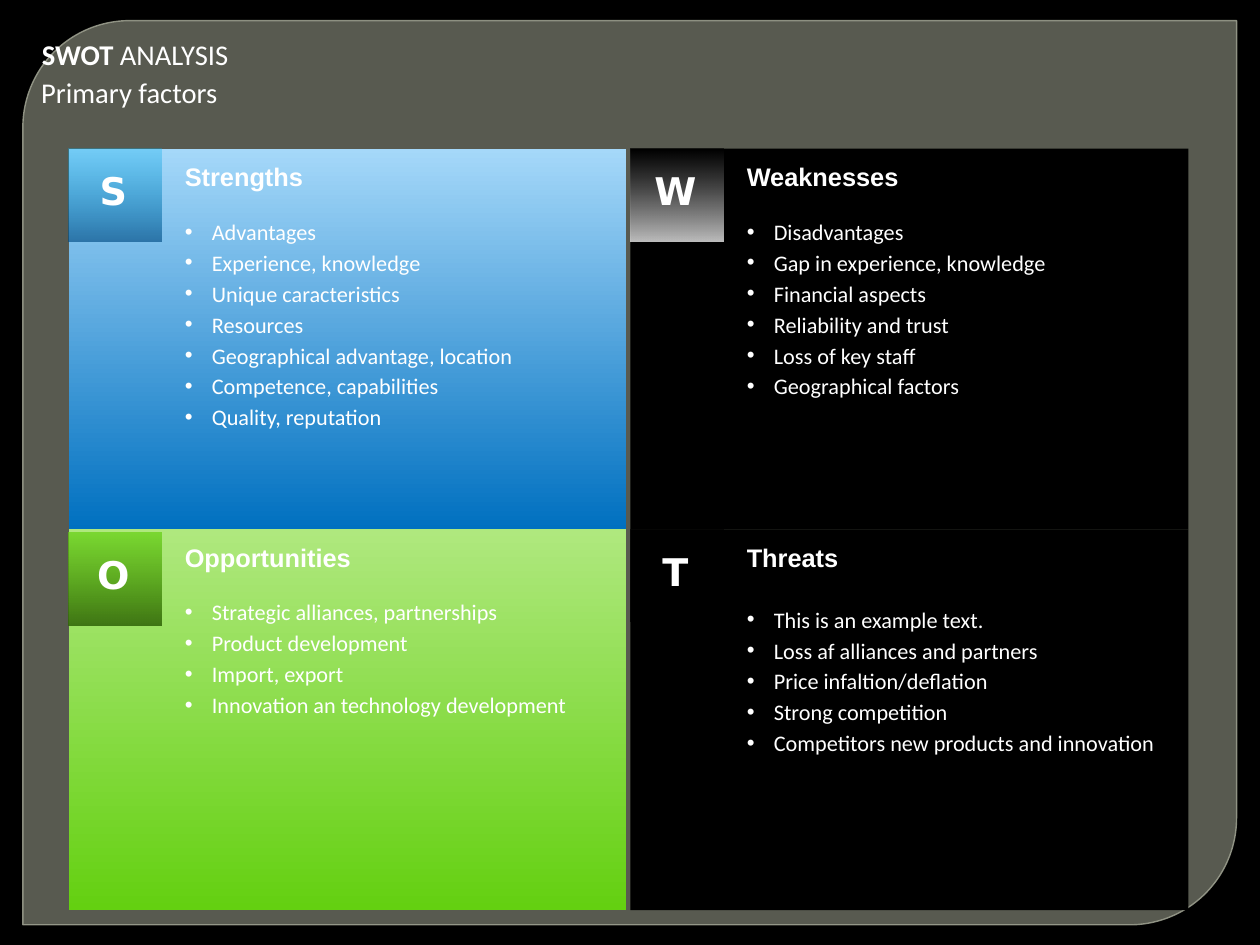
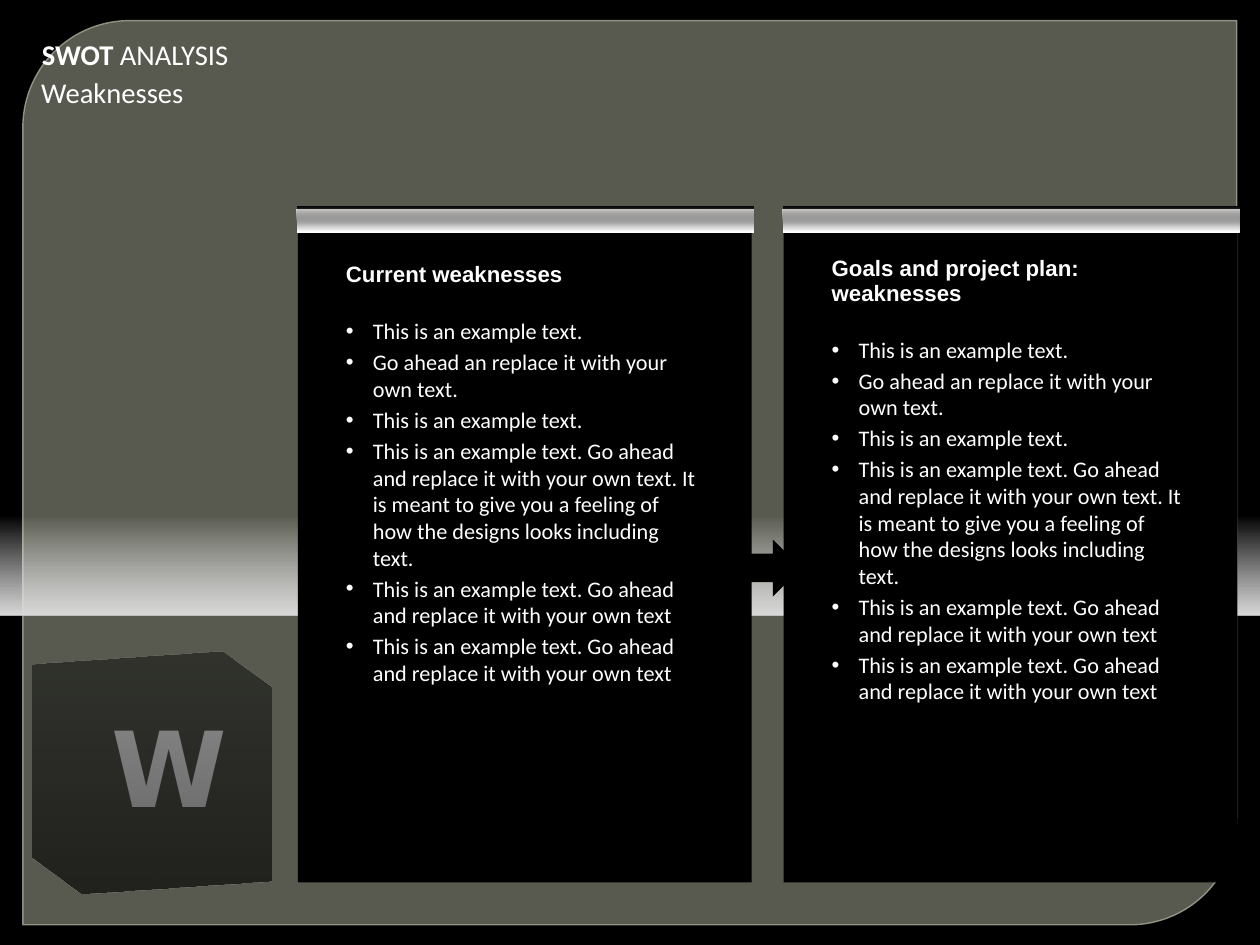
import pptx
import pptx.dml.color
import pptx.enum.shapes
import pptx.enum.text
import pptx.oxml
import pptx.oxml.ns
import pptx.util
from lxml import etree

Pt = pptx.util.Pt
SHAPES = pptx.enum.shapes.MSO_SHAPE
ALIGN = pptx.enum.text.PP_ALIGN
ANCHOR = pptx.enum.text.MSO_ANCHOR
qn = pptx.oxml.ns.qn

SLIDE_SIZE = (793.75, 595.25)
WHITE, BLACK = "FFFFFF", "000000"
FRAME, FRAME_EDGE = "888B7B", "9DA090"
BODY, HEADING, LETTER = "Calibri", "Arial", "DejaVu Sans"
TIGHT = 0.93
PANEL_SIZE = (351.4, 239.8)
PANEL_STEP = (354, 239.8)
GRID_ORIGIN = (43.2, 93.7)
TILE = 58.3

QUADRANTS = [
    ("S", "Strengths", 13.5, 0,
     [("A5D8F9", 100), ("0070C0", 100)], [("00B0F0", 30), ("004C84", 65)],
     ["Advantages", "Experience, knowledge", "Unique caracteristics", "Resources",
      "Geographical advantage, location", "Competence, capabilities",
      "Quality, reputation"]),
    ("W", "Weaknesses", 13.5, 0,
     [(BLACK, 100)], [(BLACK, 58), (WHITE, 74)],
     ["Disadvantages", "Gap in experience, knowledge", "Financial aspects",
      "Reliability and trust", "Loss of key staff", "Geographical factors"]),
    ("O", "Opportunities", 13.5, 2,
     [("AFE87E", 100), ("64D011", 100)], [("64D011", 70), ("326609", 88)],
     ["Strategic alliances, partnerships", "Product development", "Import, export",
      "Innovation an technology development"]),
    ("T", "Threats", 18, 0,
     [(BLACK, 100)], [(BLACK, 66), (BLACK, 75)],
     ["This is an example text.", "Loss af alliances and partners",
      "Price infaltion/deflation", "Strong competition",
      "Competitors new products and innovation"]),
]

EXAMPLES = [
    "This is an example text.",
    "Go ahead an replace it with your own text.",
    "This is an example text.",
    "This is an example text. Go ahead and replace it with your own text. "
    "It is meant to give you a feeling of how the designs looks including text.",
    "This is an example text. Go ahead and replace it with your own text",
    "This is an example text. Go ahead and replace it with your own text",
]


def rgb(value):
    """Turn a hex string into a colour."""
    return pptx.dml.color.RGBColor.from_string(value)


def set_opacities(shape, opacities):
    """Give each colour of a shape, in order, its opacity in percent."""
    for colour, opacity in zip(shape.element.spPr.iter(qn("a:srgbClr")), opacities):
        if opacity < 100:
            etree.SubElement(colour, qn("a:alpha")).set("val", str(opacity * 1000))


def paint(shape, stops, start=0):
    """Fill a shape plainly or from top to bottom, with no line or shadow."""
    shape.shadow.inherit = False
    shape.line.fill.background()
    if len(stops) == 1:
        shape.fill.solid()
        shape.fill.fore_color.rgb = rgb(stops[0][0])
    else:
        shape.fill.gradient()
        shape.fill.gradient_angle = 270
        for stop, (colour, _), position in zip(shape.fill.gradient_stops, stops, (start, 1)):
            stop.color.rgb = rgb(colour)
            stop.position = position
    set_opacities(shape, [opacity for _, opacity in stops])


def block(slide, box, stops, kind=SHAPES.RECTANGLE, start=0):
    """Add a painted preset shape."""
    shape = slide.shapes.add_shape(kind, *map(Pt, box))
    paint(shape, stops, start)
    return shape


def style(paragraph, size, face, bold=False, spacing=TIGHT):
    """Set the type and line spacing of a paragraph."""
    paragraph.line_spacing = spacing
    paragraph.font.size = Pt(size)
    paragraph.font.name = face
    paragraph.font.bold = bold
    paragraph.font.color.rgb = rgb(WHITE)


def text_frame(slide, box, wrap=True):
    """Add a text box and return its frame."""
    frame = slide.shapes.add_textbox(*map(Pt, box)).text_frame
    frame.word_wrap = wrap
    return frame


def add_bullet(paragraph):
    """Give a paragraph a round bullet and a hanging indent."""
    properties = paragraph._p.get_or_add_pPr()
    properties.set("marL", str(Pt(17)))
    properties.set("indent", str(-Pt(17)))
    etree.SubElement(properties, qn("a:buFont")).set("typeface", "Arial")
    etree.SubElement(properties, qn("a:buChar")).set("char", "•")


def bullet_list(slide, box, heading, heading_size, gap, items, anchor=ANCHOR.TOP):
    """Write a bold heading with bulleted items under it."""
    frame = text_frame(slide, box)
    frame.vertical_anchor = anchor
    title = frame.paragraphs[0]
    title.text = heading
    title.space_after = Pt(gap)
    style(title, heading_size, HEADING, bold=True)
    for item in items:
        entry = frame.add_paragraph()
        entry.text = item
        add_bullet(entry)
        entry.space_before = Pt(2.7)
        style(entry, 14, BODY, spacing=1.0)


def add_heading(slide, topic):
    """Write the shared title and the topic line below it."""
    title = slide.shapes.title
    title.left, title.top, title.width, title.height = map(Pt, (19.1, 21.6, 133.2, 28))
    frame = title.text_frame
    frame.word_wrap = False
    frame.auto_size = pptx.enum.text.MSO_AUTO_SIZE.NONE
    frame.vertical_anchor = ANCHOR.TOP
    line = frame.paragraphs[0]
    line.alignment = ALIGN.LEFT
    style(line, 18, BODY)
    for words, bold in (("SWOT ", True), ("ANALYSIS", False)):
        run = line.add_run()
        run.text = words
        run.font.bold = bold
    subtitle = text_frame(slide, (18.9, 45.4, 126.7, 28), wrap=False).paragraphs[0]
    subtitle.text = topic
    style(subtitle, 18, BODY)


def set_master(master, slide):
    """Give the master its black ground and rounded frame."""
    master.background.fill.solid()
    master.background.fill.fore_color.rgb = rgb(BLACK)
    frame = block(slide, (14.4, 13, 764.6, 569.5), [(FRAME, 100)],
                  SHAPES.ROUND_2_DIAG_RECTANGLE)
    frame.adjustments[0], frame.adjustments[1] = 0.118, 0
    frame.line.color.rgb = rgb(FRAME_EDGE)
    frame.line.width = Pt(0.87)
    set_opacities(frame, (65, 88))
    frame.element.nvSpPr.cNvPr.set("id", "100")
    master.shapes.element.insert(2, frame.element)


def quadrant(slide, left, top, content):
    """Draw one SWOT panel with its letter tile and list."""
    letter, heading, gap, tile_drop, ground, tile_stops, items = content
    block(slide, (left, top, *PANEL_SIZE), ground)
    tile = block(slide, (left, top + tile_drop, TILE, TILE), tile_stops)
    tile.text_frame.vertical_anchor = ANCHOR.MIDDLE
    tile.text_frame.margin_right = Pt(9)
    tile.text_frame.margin_bottom = Pt(6)
    initial = tile.text_frame.paragraphs[0]
    initial.text = letter
    initial.alignment = ALIGN.CENTER
    style(initial, 24, LETTER, bold=True)
    bullet_list(slide, (left + 66.2, top + 6, 275.8, 181.4), heading, 16, gap, items)


def overview_slide(slide):
    """Lay out the four panels in a grid."""
    add_heading(slide, "Primary factors")
    for index, content in enumerate(QUADRANTS):
        row, column = divmod(index, 2)
        quadrant(slide, GRID_ORIGIN[0] + column * PANEL_STEP[0],
                 GRID_ORIGIN[1] + row * PANEL_STEP[1], content)


def detail_panel(slide, left, top, heading, list_height):
    """Draw a black panel with a metallic top bar and its list."""
    block(slide, (left + 0.7, top + 14.4, 285.8, 411.8), [(BLACK, 100)])
    block(slide, (left, top, 288, 16.6), [(BLACK, 100), (WHITE, 100)])
    block(slide, (left, top + 2.2, 288, 7.9), [("FFFCF9", 79), ("F3F3F3", 0)])
    bullet_list(slide, (left + 23.8, top + 41.8, 238.3, list_height), heading, 14, 16,
                EXAMPLES, ANCHOR.BOTTOM)


def letter_cube(slide, left, top):
    """Draw the dimmed letter behind a translucent cube outline."""
    letter = text_frame(slide, (left + 43.2, top + 35.7, 84.2, 157), wrap=False).paragraphs[0]
    letter.text = "W"
    style(letter, 66, LETTER, bold=True)
    corners = [(0, 8.2), (119.7, 0), (150.5, 22.7), (150.5, 144.2), (30.9, 152.4), (0, 129.7)]
    points = [(Pt(left + x), Pt(top + y)) for x, y in corners]
    outline = slide.shapes.build_freeform(*points[0])
    outline.add_line_segments(points[1:], close=True)
    paint(outline.convert_to_shape(), [(BLACK, 44), (BLACK, 63)])


def weaknesses_slide(slide):
    """Lay out the glowing band, the cube and the two panels."""
    add_heading(slide, "Weaknesses")
    block(slide, (0, 226.1, SLIDE_SIZE[0], 161.3), [(WHITE, 0), ("D9D9D9", 100)], start=0.61)
    letter_cube(slide, 20.2, 410.7)
    detail_panel(slide, 187, 129.6, "Current weaknesses", 264.2)
    detail_panel(slide, 493, 129.6, "Goals and project plan: weaknesses", 275.8)
    block(slide, (463, 339.8, 41.8, 36), [(BLACK, 100)], SHAPES.RIGHT_ARROW)


def main():
    """Build and save the presentation."""
    deck = pptx.Presentation()
    deck.slide_width, deck.slide_height = map(Pt, SLIDE_SIZE)
    layout = deck.slide_layouts[5]
    overview, weaknesses = (deck.slides.add_slide(layout) for _ in range(2))
    set_master(deck.slide_master, overview)
    overview_slide(overview)
    weaknesses_slide(weaknesses)
    deck.save("out.pptx")


if __name__ == "__main__":
    main()
